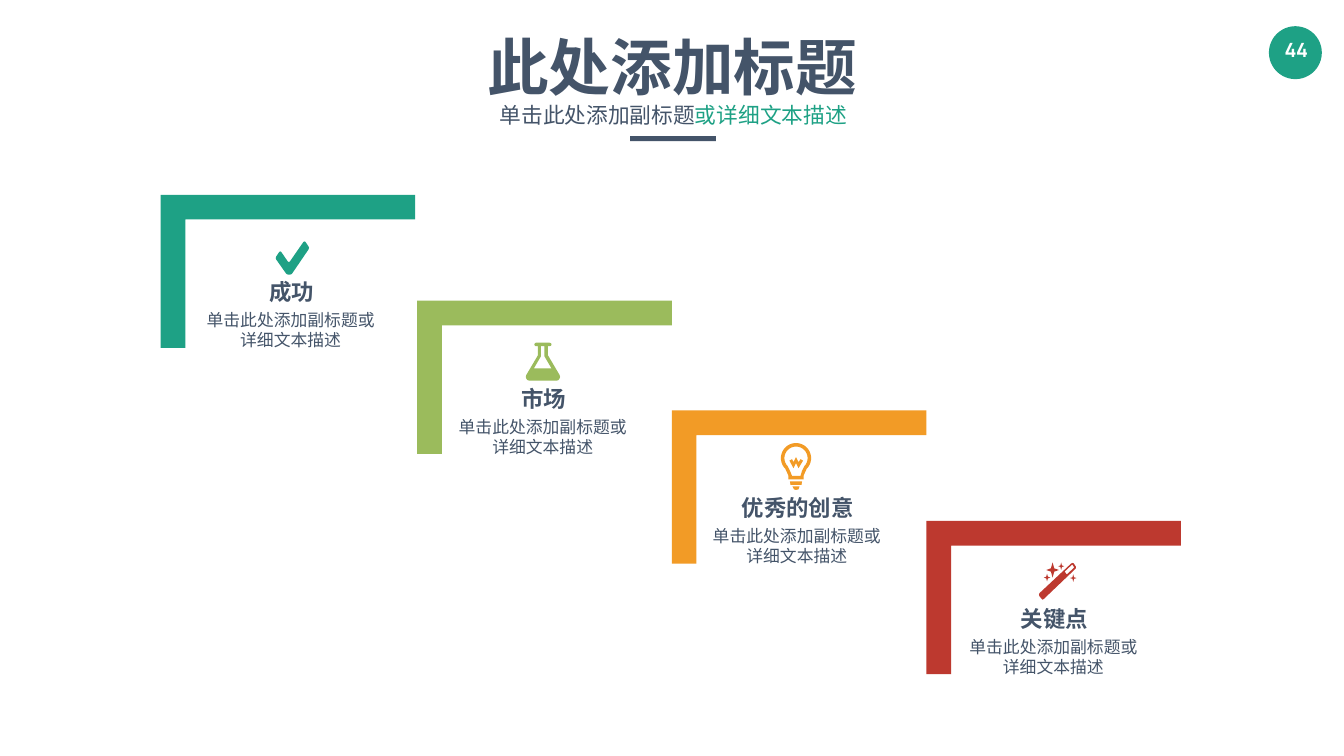
"""Build a slide of four stepped corner frames, each with an icon, a heading and a description."""
from math import cos, radians, sin

from lxml.etree import SubElement
from pptx import Presentation
from pptx.dml.color import RGBColor
from pptx.enum.shapes import MSO_SHAPE
from pptx.enum.text import MSO_ANCHOR, MSO_AUTO_SIZE, PP_ALIGN
from pptx.oxml.ns import qn
from pptx.util import Inches, Pt

COLOURS = {"green": "1EA185", "lime": "9BBB5C", "orange": "F29B26",
           "red": "BD392F", "slate": "445469", "white": "FFFFFF"}
CHINESE_FONT = "Noto Sans CJK SC"
DESCRIPTION = "单击此处添加副标题或详细文本描述"

presentation = Presentation()
presentation.slide_width, presentation.slide_height = Inches(26.66), Inches(15)
slide = presentation.slides.add_slide(presentation.slide_layouts[0])
shapes = slide.shapes
row_height = presentation.slide_height / 15


def grid(*cells):
    """Turn counts of square grid cells into lengths."""
    return [round(cell * row_height) for cell in cells]


def write(shape, text, size=24, colour="slate", bold=False, font=CHINESE_FONT,
          margins=(0.1, 0.05), spacing=1.0, wrap=True):
    """Add a formatted run to the first paragraph of a shape."""
    frame = shape.text_frame
    frame.word_wrap = wrap
    frame.auto_size = MSO_AUTO_SIZE.NONE
    frame.vertical_anchor = MSO_ANCHOR.TOP
    frame.margin_left, frame.margin_top = grid(*margins)
    frame.margin_right, frame.margin_bottom = grid(*margins)
    paragraph = frame.paragraphs[0]
    paragraph.alignment = PP_ALIGN.CENTER
    paragraph.line_spacing = spacing
    paragraph.space_before = Pt(0)
    run = paragraph.add_run()
    run.text = text
    run.font.size, run.font.bold, run.font.name = Pt(size), bold, font
    run.font.color.rgb = RGBColor.from_string(COLOURS[colour])
    SubElement(run._r.get_or_add_rPr(), qn("a:ea"), typeface=font)


# Icon outlines are in hundredths of a grid cell.
check = [[(25, 66), (22, 65), (20, 63), (1, 36), (0, 33), (1, 30), (7, 21), (9, 20),
          (11, 21), (24, 40), (26, 41), (28, 40), (55, 1), (57, 0), (59, 1), (65, 10),
          (66, 13), (65, 16), (33, 63), (31, 65), (28, 66)]]

flask = [[(67, 64), (68, 68), (67, 71), (65, 74), (62, 75), (6, 75), (3, 74), (1, 71),
          (0, 68), (1, 64), (24, 25), (24, 7), (20, 7), (18, 6), (17, 3.5), (18, 1),
          (20, 0), (47, 0), (50, 1), (51, 3.5), (50, 6), (47, 7), (44, 7), (44, 25)],
         [(16, 51), (51, 51), (37, 27), (37, 7), (30, 7), (30, 27)]]

bulb_rims = [[(30 + radius * cos(radians(angle)), 30 + radius * sin(radians(angle)))
              for angle in range(135, 406, 10)] for radius in (30, 23)]
bulb = [bulb_rims[0] + [(48, 58), (45, 65), (45, 72), (15, 72), (15, 65), (12, 58)],
        bulb_rims[1] + [(42, 55), (39, 65), (22, 65), (18, 55)],
        [(18, 76), (42, 76), (41, 83), (19, 83)],
        [(23, 86), (37, 86), (35, 92), (30, 93), (26, 92)],
        [(35, 38), (30, 28), (25, 38), (22, 32), (17, 35), (25, 50), (30, 40),
         (35, 50), (44, 35), (39, 32)]]

wand = [[(64, 2), (67, 1), (69, 2), (73, 8), (73, 12), (72, 13), (9, 73), (7, 74),
         (5, 72), (1, 67), (0, 64), (1, 61)],
        [(70, 10), (66, 4), (51, 18), (55, 24)]]
for x, y, half_width, half_height, waist in [(16, 30, 6.5, 7.5, 1.7), (27, 15, 12.5, 15, 3.3),
                                             (44, 7.5, 6, 7.5, 1.5), (68, 31, 6.5, 7.5, 1.5)]:
    wand.append([(x - half_width, y), (x - waist, y - waist), (x, y - half_height),
                 (x + waist, y - waist), (x + half_width, y), (x + waist, y + waist),
                 (x, y + half_height), (x - waist, y + waist)])

painted = []
badge = shapes.add_shape(MSO_SHAPE.OVAL, *grid(25.17, 0.52, 1.05, 1.05))
painted.append((badge, "green"))
number = shapes.add_textbox(*grid(25.23, 0.66, 0.97, 0.67))
write(number, "44", size=28, colour="white", bold=True, font="Manrope",
      margins=(0.2, 0.1), wrap=False)

# Each step: heading, colour, frame corner, heading corner, icon corner, icon outline.
steps = [
    ("成功", "green", (4.19, 2.86), (4.48, 5.45), (5.47, 4.79), check),
    ("市场", "lime", (9.28, 4.96), (9.48, 7.57), (10.43, 6.8), flask),
    ("优秀的创意", "orange", (14.33, 7.14), (14.52, 9.73), (15.49, 8.79), bulb),
    ("关键点", "red", (19.38, 9.33), (19.61, 11.93), (20.61, 11.16), wand),
]
for heading, colour, frame_corner, (left, top), (icon_left, icon_top), outline in steps:
    corner_frame = shapes.add_shape(MSO_SHAPE.CORNER, *grid(*frame_corner, 3.04, 5.05))
    corner_frame.rotation = 90
    corner_frame.adjustments[0] = corner_frame.adjustments[1] = 0.161
    painted.append((corner_frame, colour))

    heading_box = shapes.add_textbox(*grid(left, top, 2.61, 0.83))
    write(heading_box, heading, size=32, bold=True, margins=(0.13, 0.13), spacing=0.9)
    description_box = shapes.add_textbox(*grid(left - 0.68, top + 0.57, 3.93, 1.42))
    write(description_box, DESCRIPTION, margins=(0.27, 0.13))

    contours = [[grid(icon_left + x / 100, icon_top + y / 100) for x, y in contour]
                for contour in outline]
    builder = shapes.build_freeform(*contours[0][0], scale=1.0)
    builder.add_line_segments(contours[0][1:])
    for contour in contours[1:]:
        builder.move_to(*contour[0])
        builder.add_line_segments(contour[1:])
    painted.append((builder.convert_to_shape(), colour))

title, subtitle = shapes.title, slide.placeholders[1]
title.left, title.top, title.width, title.height = grid(6.57, 0.53, 13.52, 1.58)
write(title, "此处添加标题", size=88, bold=True)
subtitle.left, subtitle.top, subtitle.width, subtitle.height = grid(6.98, 1.79, 12.75, 0.92)
for text, colour in [("单击此处添加副标题", "slate"), ("或详细文本描述", "green")]:
    write(subtitle, text, size=31, colour=colour, margins=(0.24, 0.12), spacing=1.2)
rule = shapes.add_shape(MSO_SHAPE.RECTANGLE, *grid(12.5, 2.7, 1.7, 0.1))
painted.append((rule, "slate"))

for shape, colour in painted:
    shape.shadow.inherit = False
    shape.fill.solid()
    shape.fill.fore_color.rgb = RGBColor.from_string(COLOURS[colour])
    shape.line.fill.background()

presentation.save("out.pptx")
